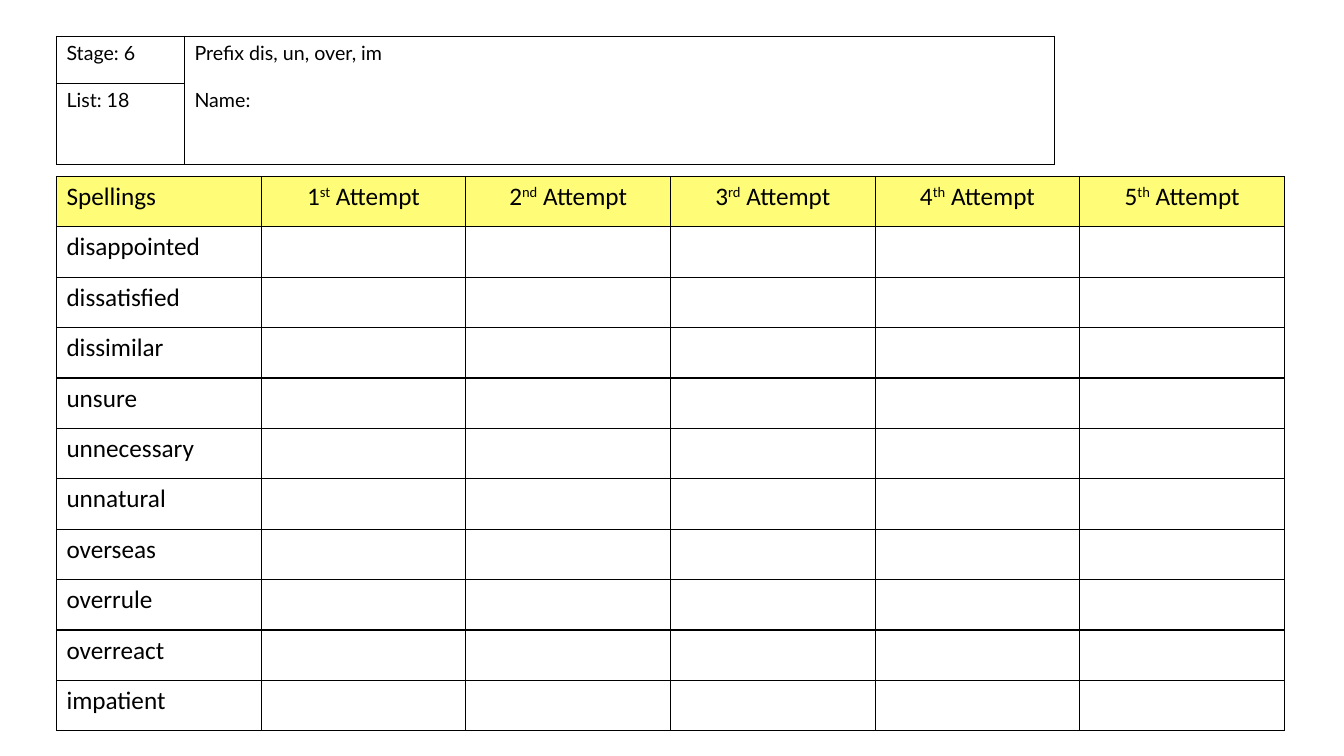
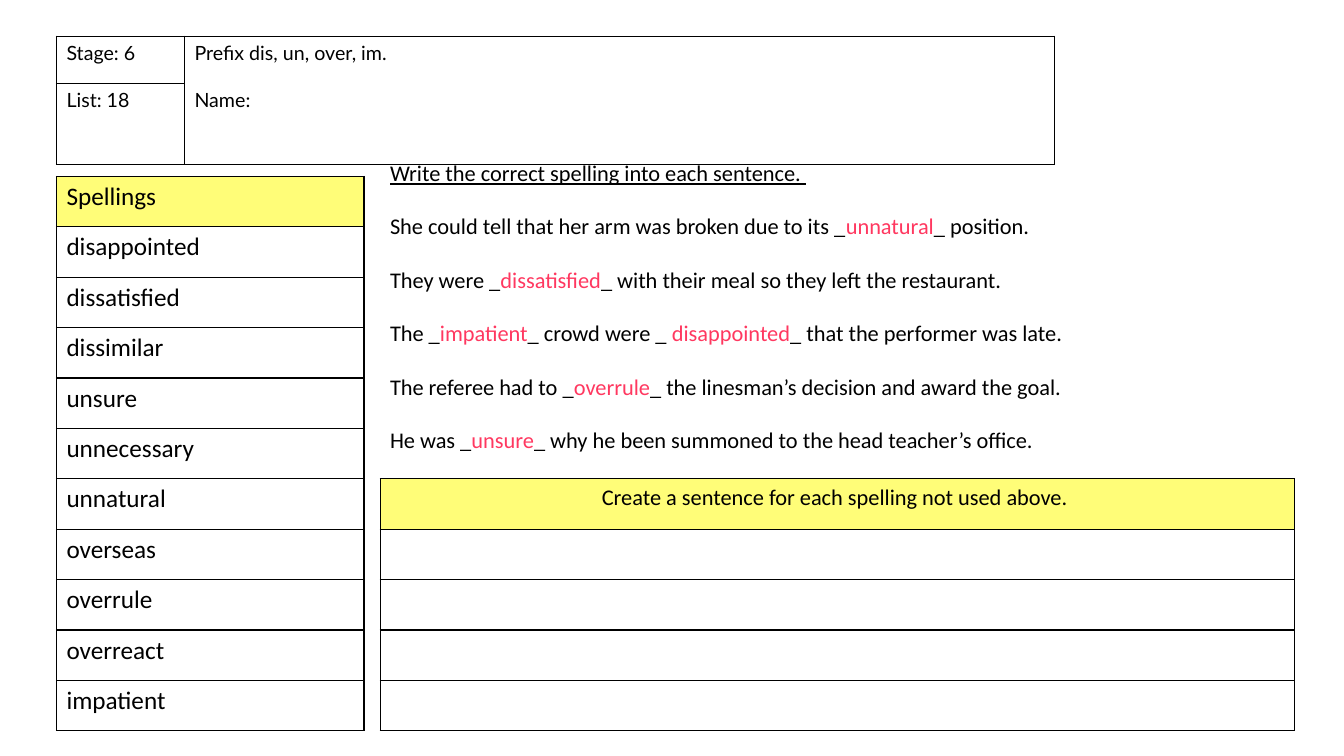
from pptx import Presentation
from pptx.dml.color import RGBColor
from pptx.enum.text import PP_ALIGN as Align
from pptx.oxml import parse_xml
from pptx.oxml.ns import nsdecls
from pptx.util import Inches, Pt

BLACK = RGBColor(0x00, 0x00, 0x00)
YELLOW = RGBColor(0xFF, 0xFD, 0x78)
PINK = RGBColor(0xFF, 0x38, 0x60)

LEFT, TOP, ROW = 0.56, 1.75, 0.5
WORDS = ["disappointed", "dissatisfied", "dissimilar", "unsure", "unnecessary",
         "unnatural", "overseas", "overrule", "overreact", "impatient"]
ENDINGS = ["st", "nd", "rd", "th", "th"]
# Text between bars is the marked part of a line
TITLE = "Write the correct spelling into each sentence. "
LINES = [
    "She could tell that her arm was broken due to its _|unnatural|_ position.",
    "They were _|dissatisfied|_ with their meal so they left the restaurant.",
    "The _|impatient|_ crowd were _ |disappointed|_ that the performer was late.",
    "The referee had to _|overrule|_ the linesman’s decision and award the goal.",
    "He was _|unsure|_ why he been summoned to the head teacher’s office.",
]


def raised(run):
    run._r.get_or_add_rPr().set("baseline", "30000")


def answer(run):
    run.font.color.rgb = PINK


class Sheet:
    """Spelling sheet: shared style and the current slide."""

    def __init__(self):
        self.deck = Presentation()
        self.deck.slide_width = Inches(13.33)
        self.deck.slide_height = Inches(7.5)

    def page(self, topic):
        self.slide = self.deck.slides.add_slide(self.deck.slide_layouts[6])
        self.header(topic)

    def fill_in(self, frame, lines, size, name="Calibri", align=Align.LEFT,
                gap=0, mark=None):
        for i, line in enumerate(lines):
            para = frame.add_paragraph() if i else frame.paragraphs[0]
            para.alignment = align
            if i:
                para.space_before = Pt(gap)
            font = para.font
            font.size, font.name = Pt(size), name
            font.color.rgb = BLACK
            for j, part in enumerate(line.split("|")):
                run = para.add_run()
                run.text = part
                if j % 2:
                    mark(run)

    def border(self, cell):
        props = cell._tc.get_or_add_tcPr()
        for side in "LRTB":
            props.append(parse_xml(
                f'<a:ln{side} {nsdecls("a")} w="12700"><a:solidFill>'
                f'<a:srgbClr val="{BLACK}"/></a:solidFill></a:ln{side}>'))

    def table(self, left, top, cols, rows, band=True):
        frame = self.slide.shapes.add_table(
            len(rows), len(cols), Inches(left), Inches(top),
            Inches(sum(cols)), Inches(sum(rows)))
        table = frame.table
        table.first_row = table.horz_banding = False
        for col, width in zip(table.columns, cols):
            col.width = Inches(width)
        for i, (row, height) in enumerate(zip(table.rows, rows)):
            row.height = Inches(height)
            for cell in row.cells:
                self.border(cell)
                if band and i == 0:
                    cell.fill.solid()
                    cell.fill.fore_color.rgb = YELLOW
                else:
                    cell.fill.background()
        return table

    def header(self, topic):
        table = self.table(LEFT, 0.36, [1.27, 8.63], [0.47, 0.8], band=False)
        table.cell(0, 1).merge(table.cell(1, 1))
        cells = [(0, 0, ["Stage: 6"]), (1, 0, ["List: 18"]),
                 (0, 1, [topic, "Name:"])]
        for row, col, lines in cells:
            self.fill_in(table.cell(row, col).text_frame, lines, 14, "Lato",
                         gap=16.8)

    def spellings(self, cols):
        table = self.table(LEFT, TOP, cols, [ROW] * (len(WORDS) + 1))
        for i, word in enumerate(["Spellings"] + WORDS):
            self.fill_in(table.cell(i, 0).text_frame, [word], 18)
        return table

    def text(self, left, top, width, height, lines, size, gap, mark):
        box = self.slide.shapes.add_textbox(
            Inches(left), Inches(top), Inches(width), Inches(height))
        box.text_frame.word_wrap = True
        self.fill_in(box.text_frame, lines, size, gap=gap, mark=mark)
        return box.text_frame


def main():
    sheet = Sheet()

    # Practice grid
    sheet.page("Prefix dis, un, over, im")
    grid = sheet.spellings([2.03] * 6)
    for n, end in enumerate(ENDINGS, 1):
        sheet.fill_in(grid.cell(0, n).text_frame, [f"{n}|{end}| Attempt"], 18,
                      align=Align.CENTER, mark=raised)

    # Sentences with the missing words
    sheet.page("Prefix dis, un, over, im.")
    sheet.spellings([3.05])
    frame = sheet.text(3.77, 1.53, 9.56, 3.1, [TITLE] + LINES, 16, 19, answer)
    frame.paragraphs[0].font.underline = True

    # Space for own sentences
    own = sheet.table(3.77, TOP + 6 * ROW, [9.07], [ROW] * 5)
    sheet.fill_in(own.cell(0, 0).text_frame,
                  ["Create a sentence for each spelling not used above. "], 16,
                  align=Align.CENTER)

    sheet.deck.save("out.pptx")


if __name__ == "__main__":
    main()
